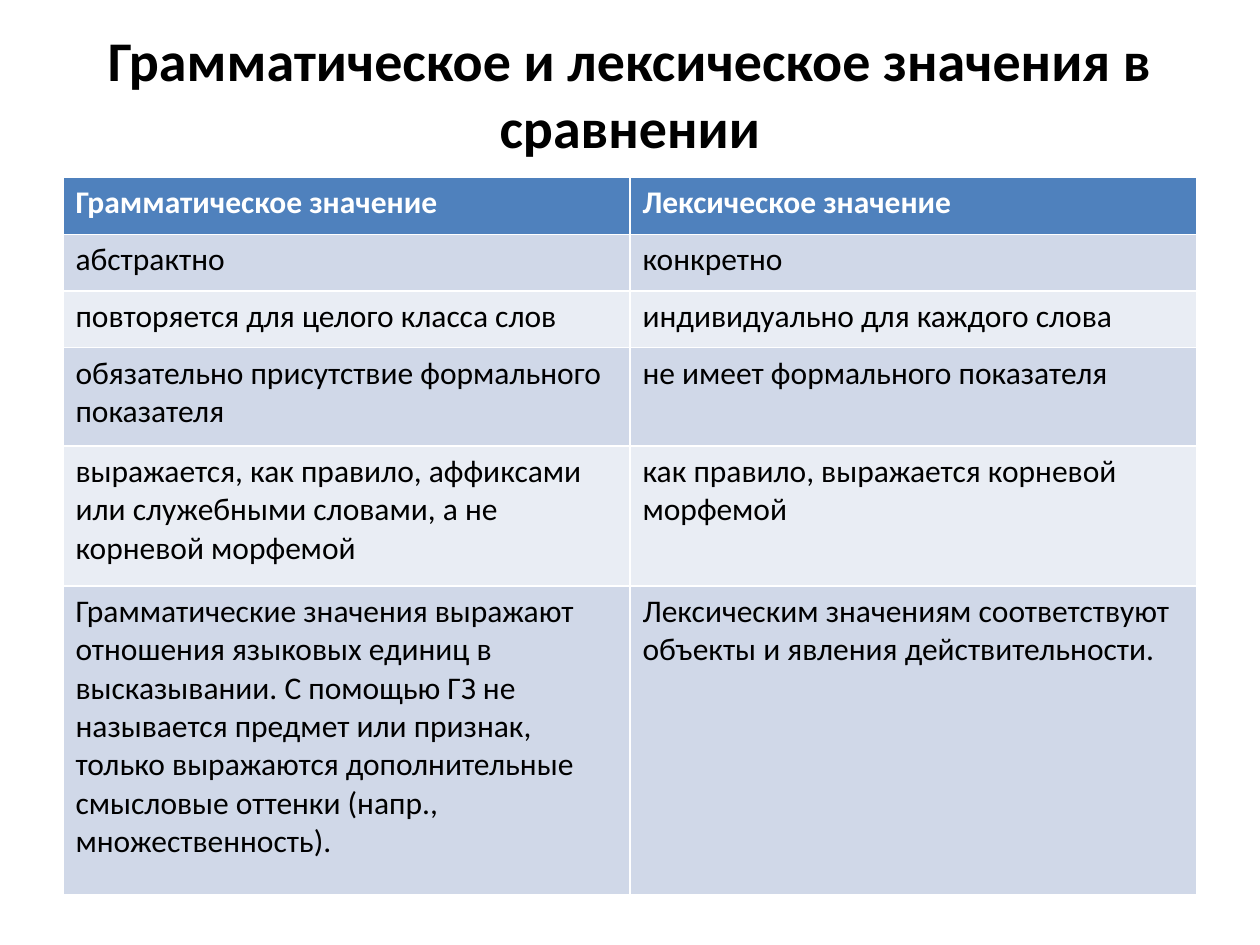
from pptx import Presentation
from pptx.dml.color import RGBColor
from pptx.enum.text import MSO_ANCHOR, PP_ALIGN
from pptx.util import Inches, Pt

FONT = "Calibri"
BLACK = RGBColor(0x00, 0x00, 0x00)
WHITE = RGBColor(0xFF, 0xFF, 0xFF)
HEADER_BLUE = RGBColor(0x4F, 0x81, 0xBD)
BAND_DARK = RGBColor(0xD0, 0xD8, 0xE8)
BAND_LIGHT = RGBColor(0xE9, 0xED, 0xF4)

COMPARISON = [
    ("Грамматическое значение", "Лексическое значение"),
    ("абстрактно", "конкретно"),
    ("повторяется для целого класса слов", "индивидуально для каждого слова"),
    ("обязательно присутствие формального показателя",
     "не имеет формального показателя"),
    ("выражается, как правило, аффиксами или служебными словами, "
     "а не корневой морфемой",
     "как правило, выражается корневой морфемой"),
    ("Грамматические значения выражают отношения языковых единиц в высказывании. "
     "С помощью ГЗ не называется предмет или признак, только выражаются "
     "дополнительные смысловые оттенки (напр., множественность).",
     "Лексическим значениям соответствуют объекты и явления действительности."),
]
ROW_HEIGHTS = [0.45, 0.45, 0.45, 0.78, 1.11, 2.45]


def format_text(para, size, color, bold):
    for span in para.runs:
        span.font.name = FONT
        span.font.size = Pt(size)
        span.font.bold = bold
        span.font.color.rgb = color


deck = Presentation()
deck.slide_width, deck.slide_height = Inches(10), Inches(7.5)
page = deck.slides.add_slide(deck.slide_layouts[5])

title = page.shapes.title
title.left, title.top = Inches(0.5), Inches(0.3)
title.width, title.height = Inches(9), Inches(0.87)
title.text_frame.text = "Грамматическое и лексическое значения в сравнении"
title.text_frame.vertical_anchor = MSO_ANCHOR.MIDDLE
title_para = title.text_frame.paragraphs[0]
title_para.alignment = PP_ALIGN.CENTER
format_text(title_para, 32, BLACK, True)

table = page.shapes.add_table(
    len(COMPARISON), 2, Inches(0.5), Inches(1.41), Inches(9), Inches(sum(ROW_HEIGHTS))
).table

for row_index, (texts, height) in enumerate(zip(COMPARISON, ROW_HEIGHTS)):
    table.rows[row_index].height = Inches(height)
    is_header = row_index == 0
    band = BAND_DARK if row_index % 2 else BAND_LIGHT
    for column_index, text in enumerate(texts):
        cell = table.cell(row_index, column_index)
        cell.fill.solid()
        cell.fill.fore_color.rgb = HEADER_BLUE if is_header else band
        cell.text_frame.text = text
        format_text(cell.text_frame.paragraphs[0], 18,
                    WHITE if is_header else BLACK, is_header)

deck.save("out.pptx")
